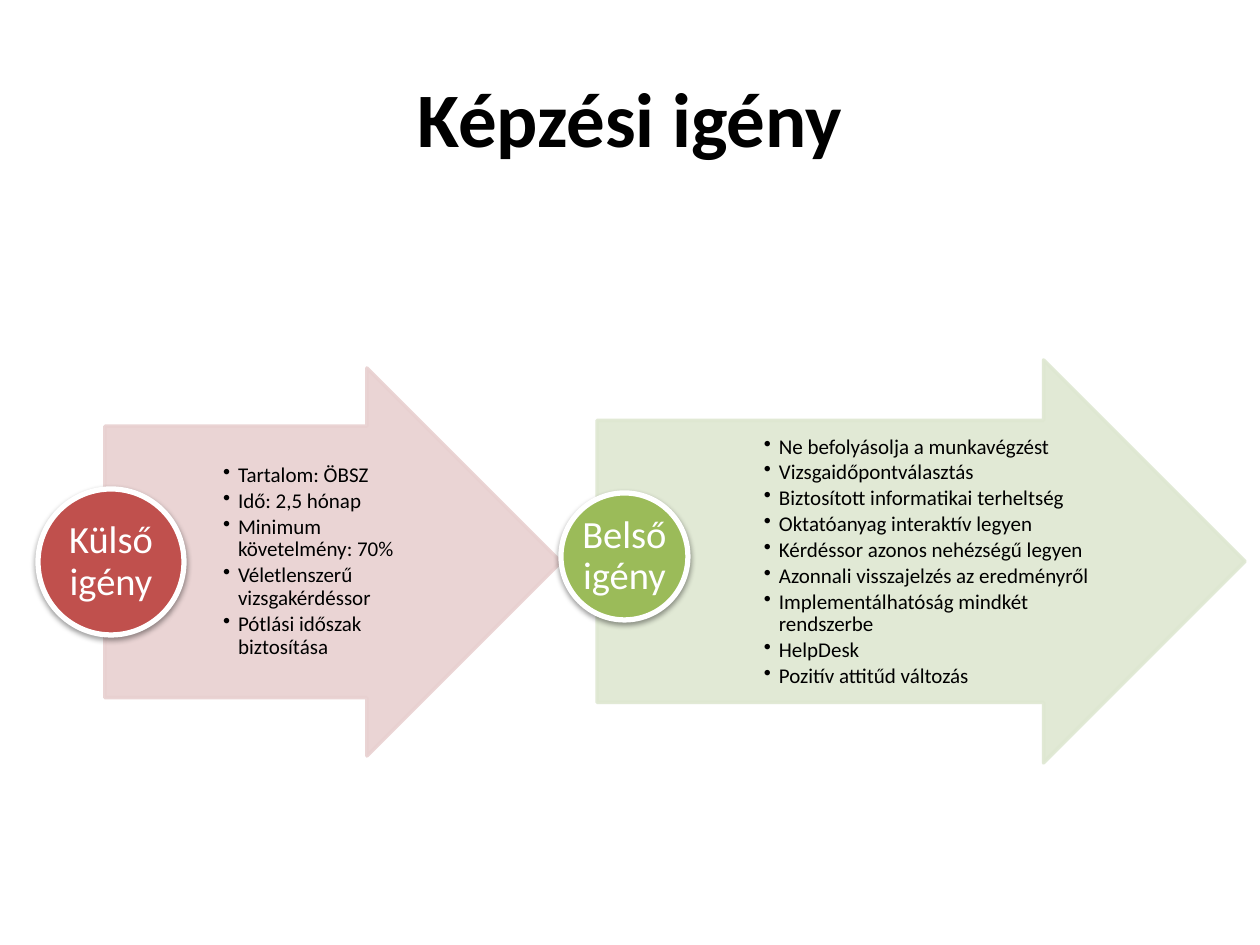
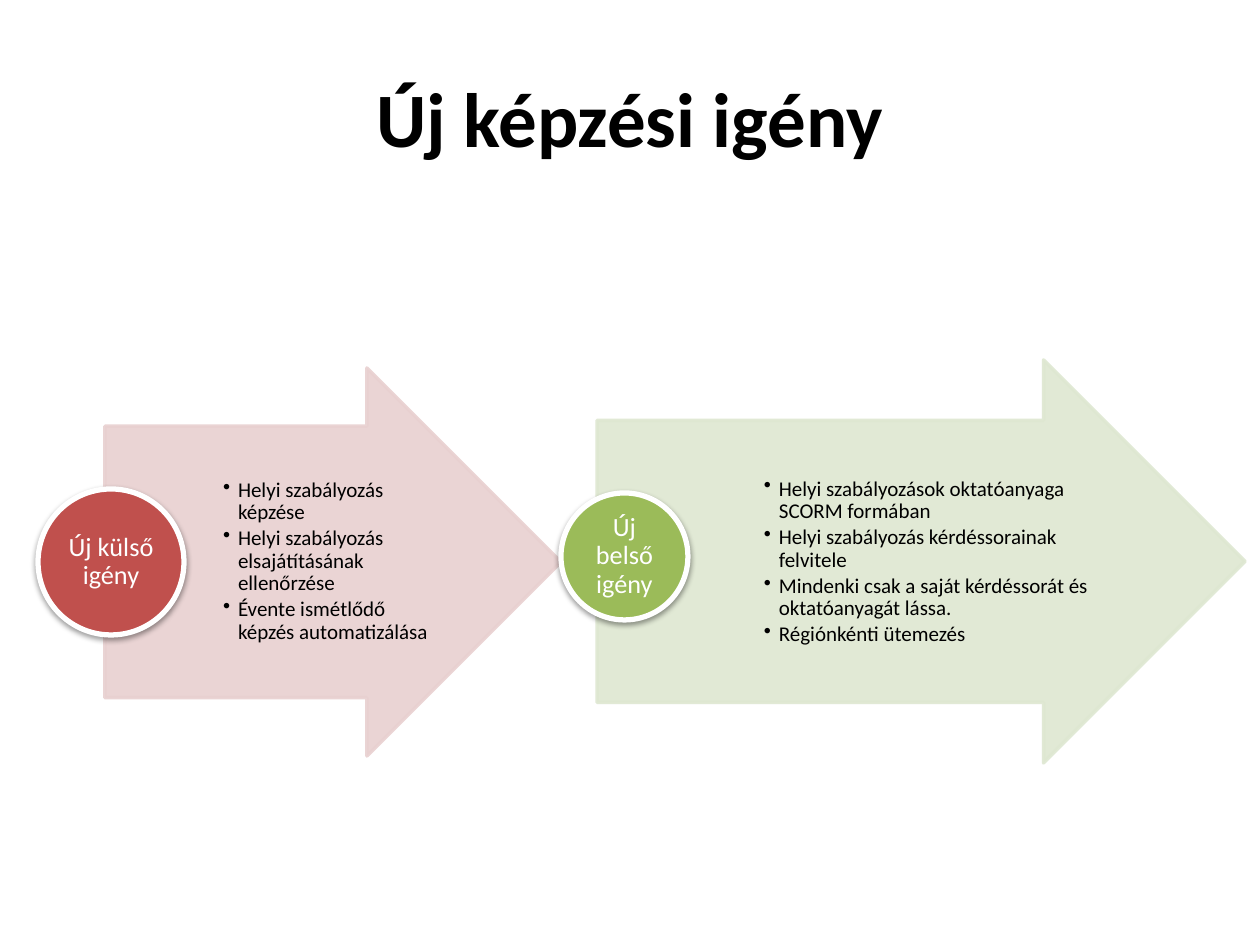
from pptx import Presentation
from pptx import util as u
from pptx.dml.color import RGBColor
from pptx.enum import shapes, text
from pptx.oxml import parse_xml
from pptx.oxml.ns import nsdecls, qn
from lxml import etree

DECK = [
    {
        "title": "Képzési igény",
        "size": 22,
        "needs": [
            ("Külső igény", [
                "Tartalom: ÖBSZ",
                "Idő: 2,5 hónap",
                "Minimum követelmény: 70%",
                "Véletlenszerű vizsgakérdéssor",
                "Pótlási időszak biztosítása",
            ]),
            ("Belső igény", [
                "Ne befolyásolja a munkavégzést",
                "Vizsgaidőpontválasztás",
                "Biztosított informatikai terheltség",
                "Oktatóanyag interaktív legyen",
                "Kérdéssor azonos nehézségű legyen",
                "Azonnali visszajelzés az eredményről",
                "Implementálhatóság mindkét rendszerbe",
                "HelpDesk",
                "Pozitív attitűd változás",
            ]),
        ],
    },
    {
        "title": "Új képzési igény",
        "size": 15,
        "needs": [
            ("Új külső igény", [
                "Helyi szabályozás képzése",
                "Helyi szabályozás elsajátításának ellenőrzése",
                "Évente ismétlődő képzés automatizálása",
            ]),
            ("Új belső igény", [
                "Helyi szabályozások oktatóanyaga SCORM formában",
                "Helyi szabályozás kérdéssorainak felvitele",
                "Mindenki csak a saját kérdéssorát és oktatóanyagát lássa.",
                "Régiónkénti ütemezés",
            ]),
        ],
    },
]

COLORS = {
    "ink": "000000", "white": "FFFFFF",
    "red": "C0504D", "pink": "E8D0D0",
    "green": "9BBB59", "mint": "DEE7D1",
}
FONT = "Calibri"
PX = 914400 // 126
TITLE = (63, 38, 1134, 157)
# Left, top, width, height of each part, in px
SIDES = [
    {"arrow": (105, 368, 456, 388), "list": (219, 426, 222, 271),
     "disc": (38, 489, 146, 146), "pale": "pink", "deep": "red"},
    {"arrow": (597, 360, 648, 403), "list": (760, 421, 344, 282),
     "disc": (561, 493, 127, 127), "pale": "mint", "deep": "green"},
]
HANG = 15


def scale(box):
    return [n * PX for n in box]


def paint(form, color):
    form.solid()
    form.fore_color.rgb = RGBColor.from_string(COLORS[color])


def style(para, size, color, bold=False):
    font = para.font
    font.name, font.size, font.bold = FONT, u.Pt(size), bold
    font.color.rgb = RGBColor.from_string(COLORS[color])


def frame(shape, insets):
    """Wrap and centre the text vertically; insets run left, top, right, bottom."""
    tf = shape.text_frame
    tf.word_wrap = True
    tf.vertical_anchor = text.MSO_ANCHOR.MIDDLE
    (tf.margin_left, tf.margin_top,
     tf.margin_right, tf.margin_bottom) = scale(insets)
    return tf


def add_form(slide, kind, box, fill, line, width):
    shape = slide.shapes.add_shape(kind, *scale(box))
    shape.shadow.inherit = False
    paint(shape.fill, fill)
    paint(shape.line.fill, line)
    shape.line.width = u.Pt(width)
    return shape


def add_arrow(slide, box, color):
    arrow = add_form(slide, shapes.MSO_SHAPE.RIGHT_ARROW, box, color, color, 2)
    arrow.adjustments[0], arrow.adjustments[1] = 0.7, 0.5
    for clr in arrow._element.spPr.iter(qn("a:srgbClr")):
        etree.SubElement(clr, qn("a:alpha"), val="90000")


def add_list(slide, box, items):
    tf = frame(slide.shapes.add_textbox(*scale(box)), (4, 1, 3, 1))
    for i, item in enumerate(items):
        para = tf.add_paragraph() if i else tf.paragraphs[0]
        para.text = item
        props = para._p.get_or_add_pPr()
        props.set("marL", str(HANG * PX))
        props.set("indent", str(-HANG * PX))
        etree.SubElement(props, qn("a:buChar"), char="•")
        para.line_spacing = 0.9
        para.space_after = u.Pt(1.8)
        style(para, 12, "ink")


def add_disc(slide, box, color, label, size):
    disc = add_form(slide, shapes.MSO_SHAPE.OVAL, box, color, "white", 3)
    disc._element.spPr.find(qn("a:effectLst")).append(parse_xml(
        f'<a:outerShdw {nsdecls("a")} blurRad="40000" dist="20000" '
        'dir="5400000" rotWithShape="0"><a:srgbClr val="000000">'
        '<a:alpha val="38000"/></a:srgbClr></a:outerShdw>'))
    para = frame(disc, (2, 2, 2, 2)).paragraphs[0]
    para.text = label
    para.alignment = text.PP_ALIGN.CENTER
    para.line_spacing = 0.9
    style(para, size, "white")


def add_title(slide, words):
    title = slide.shapes.title
    title.left, title.top, title.width, title.height = scale(TITLE)
    title.text = words
    para = title.text_frame.paragraphs[0]
    para.alignment = text.PP_ALIGN.CENTER
    style(para, 44, "ink", True)


def main():
    prs = Presentation()
    prs.slide_width, prs.slide_height = u.Inches(10), u.Inches(7.5)
    for page in DECK:
        slide = prs.slides.add_slide(prs.slide_layouts[5])
        add_title(slide, page["title"])
        for side, (label, items) in zip(SIDES, page["needs"]):
            add_arrow(slide, side["arrow"], side["pale"])
            add_list(slide, side["list"], items)
            add_disc(slide, side["disc"], side["deep"], label, page["size"])
    prs.save("out.pptx")


if __name__ == "__main__":
    main()
